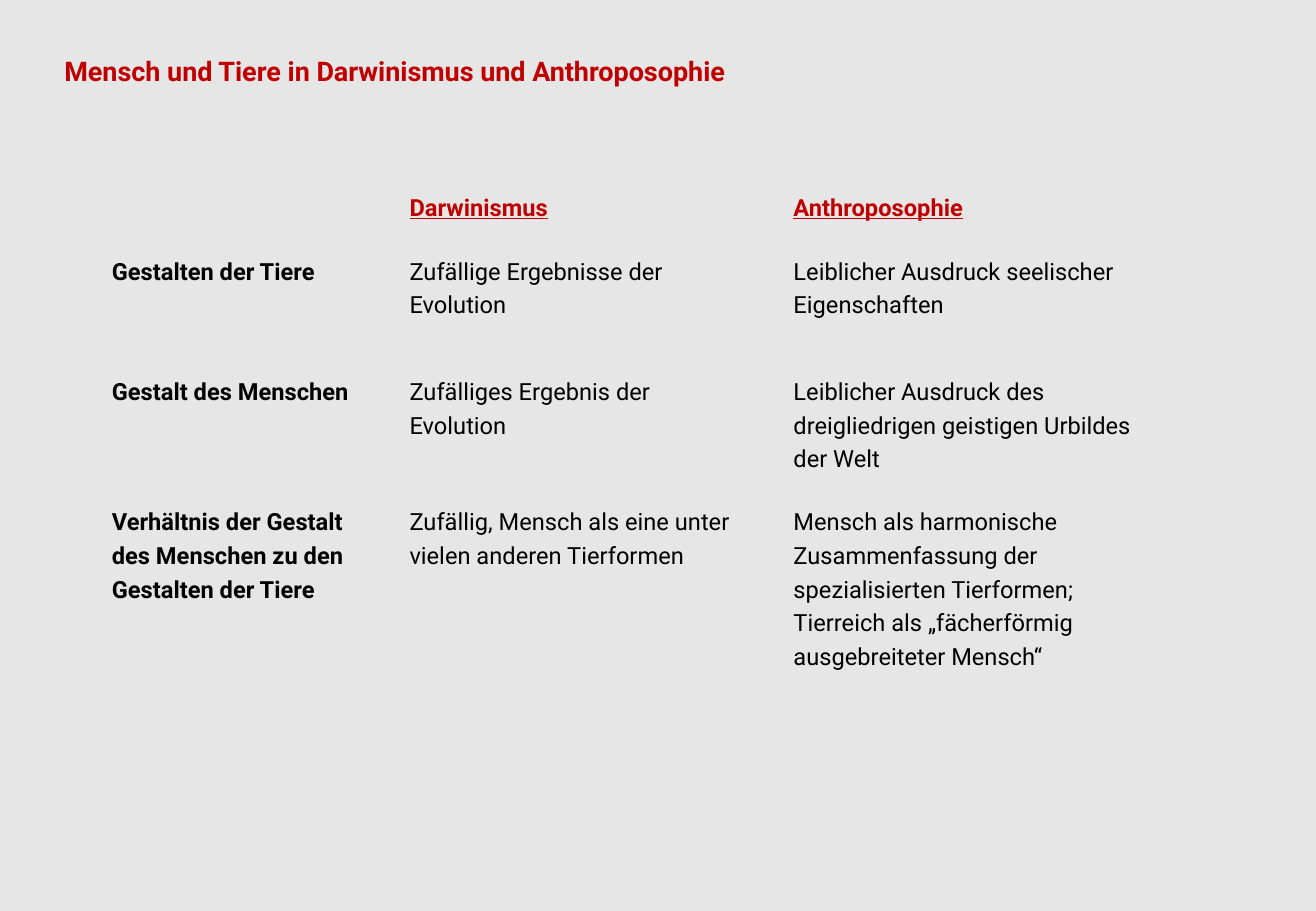
from pptx import Presentation
from pptx.dml.color import RGBColor
from pptx.enum.text import MSO_ANCHOR, PP_ALIGN
from pptx.util import Inches, Pt

TOP = MSO_ANCHOR.TOP
LEFT = PP_ALIGN.LEFT
GREY = RGBColor(0xE6, 0xE6, 0xE6)
RED = RGBColor(0xC0, 0x00, 0x00)
BLACK = RGBColor(0x00, 0x00, 0x00)
FONT = "Roboto"
PLAIN_TABLE_STYLE = "{2D5ABB26-0587-4C30-8999-92F81FD0307C}"
TITLE_ONLY_LAYOUT = 5

TITLE = "Mensch und Tiere in Darwinismus und Anthroposophie"
COMPARISON = [
    ["", "Darwinismus", "Anthroposophie"],
    ["Gestalten der Tiere",
     "Zufällige Ergebnisse der Evolution",
     "Leiblicher Ausdruck seelischer Eigenschaften"],
    ["Gestalt des Menschen",
     "Zufälliges Ergebnis der Evolution",
     "Leiblicher Ausdruck des dreigliedrigen geistigen Urbildes der Welt"],
    ["Verhältnis der Gestalt des Menschen zu den Gestalten der Tiere",
     "Zufällig, Mensch als eine unter vielen anderen Tierformen",
     "Mensch als harmonische Zusammenfassung der spezialisierten Tierformen; "
     "Tierreich als „fächerförmig ausgebreiteter Mensch“"],
]
COLUMN_WIDTHS = [2.45, 3.16, 3.22]
ROW_HEIGHTS = [0.47, 0.99, 0.99, 1.49]


def format_runs(paragraph, size, color, bold, underline=False):
    for run in paragraph.runs:
        font = run.font
        font.name = FONT
        font.size = Pt(size)
        font.bold = bold
        font.underline = underline
        font.color.rgb = color


def set_title(slide):
    title = slide.shapes.title
    title.left, title.top = Inches(0.43), Inches(0.4)
    title.width, title.height = Inches(9.74), Inches(0.37)
    frame = title.text_frame
    frame.text = TITLE
    frame.word_wrap = True
    frame.vertical_anchor = TOP
    paragraph = frame.paragraphs[0]
    paragraph.alignment = LEFT
    format_runs(paragraph, 16, RED, True)


def fill_cell(cell, text, row, column):
    cell.fill.background()
    cell.margin_left = cell.margin_right = Inches(0.2)
    cell.margin_top = cell.margin_bottom = Inches(0.12)
    paragraph = cell.text_frame.paragraphs[0]
    is_header = row == 0
    if row < 2:
        paragraph.space_before = Pt(3)
    if not is_header:
        paragraph.line_spacing = Pt(20)
    if not text:
        # Keeps the empty corner cell from stretching the header row
        paragraph._p.get_or_add_endParaRPr().set("sz", "1400")
        return
    paragraph.text = text
    format_runs(paragraph, 14, RED if is_header else BLACK,
                is_header or column == 0, is_header)


def add_comparison_table(slide):
    table = slide.shapes.add_table(
        len(ROW_HEIGHTS), len(COLUMN_WIDTHS), Inches(0.72), Inches(1.48),
        Inches(sum(COLUMN_WIDTHS)), Inches(sum(ROW_HEIGHTS))).table
    table.first_row = table.horz_banding = False
    table._tbl.tblPr[0].text = PLAIN_TABLE_STYLE
    for column, width in zip(table.columns, COLUMN_WIDTHS):
        column.width = Inches(width)
    for row, height in zip(table.rows, ROW_HEIGHTS):
        row.height = Inches(height)
    for row, texts in enumerate(COMPARISON):
        for column, text in enumerate(texts):
            fill_cell(table.cell(row, column), text, row, column)


def main():
    presentation = Presentation()
    presentation.slide_width = Inches(10.83)
    presentation.slide_height = Inches(7.5)
    layout = presentation.slide_layouts[TITLE_ONLY_LAYOUT]
    slide = presentation.slides.add_slide(layout)
    background = slide.background.fill
    background.solid()
    background.fore_color.rgb = GREY
    set_title(slide)
    add_comparison_table(slide)
    presentation.save("out.pptx")


if __name__ == "__main__":
    main()
